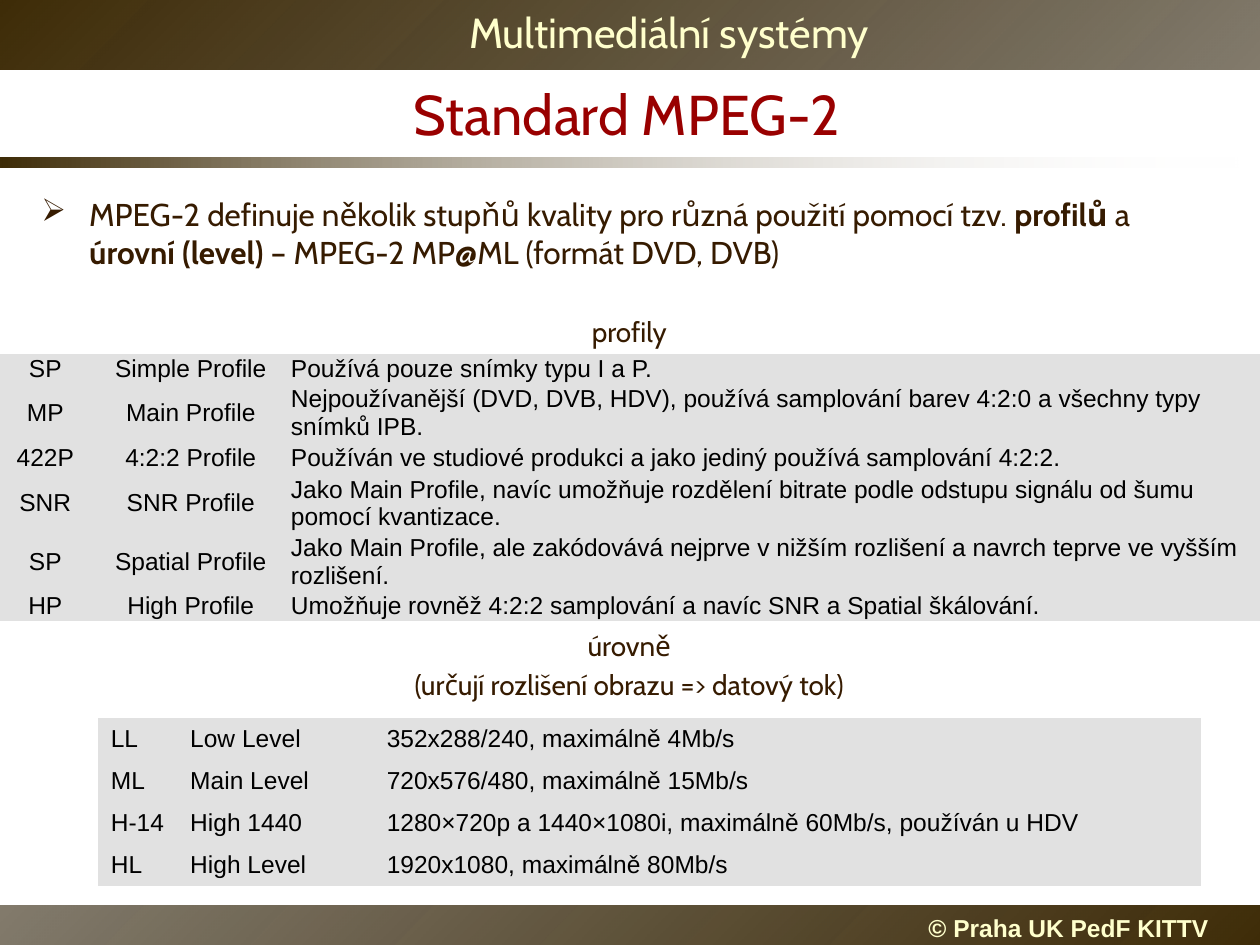
from lxml import etree
from pptx import Presentation
from pptx.dml.color import RGBColor
from pptx.enum import shapes, text
from pptx.oxml import parse_xml
from pptx.oxml.ns import nsdecls, qn
from pptx.util import Inches, Pt

DARK_BROWN = RGBColor(0x2C, 0x1F, 0x06)
BROWN = RGBColor(0x3E, 0x2C, 0x08)
TEXT_BROWN = RGBColor(0x36, 0x1B, 0x00)
WHITE = RGBColor(0xFF, 0xFF, 0xFF)
CREAM = RGBColor(0xFF, 0xFF, 0xCC)
RED = RGBColor(0x99, 0x00, 0x00)
BLACK = RGBColor(0, 0, 0)
CELL_GREY = RGBColor(0xE1, 0xE1, 0xE1)

LEFT, CENTER = text.PP_ALIGN.LEFT, text.PP_ALIGN.CENTER

PROFILES = [
    ("SP", "Simple Profile", "Používá pouze snímky typu I a P."),
    ("MP", "Main Profile", "Nejpoužívanější (DVD, DVB, HDV), používá samplování "
     "barev 4:2:0 a všechny typy snímků IPB."),
    ("422P", "4:2:2 Profile", "Používán ve studiové produkci a jako jediný "
     "používá samplování 4:2:2."),
    ("SNR", "SNR Profile", "Jako Main Profile, navíc umožňuje rozdělení bitrate "
     "podle odstupu signálu od šumu pomocí kvantizace."),
    ("SP", "Spatial Profile", "Jako Main Profile, ale zakódovává nejprve v nižším "
     "rozlišení a navrch teprve ve vyšším rozlišení."),
    ("HP", "High Profile", "Umožňuje rovněž 4:2:2 samplování a navíc SNR a "
     "Spatial škálování."),
]
LEVELS = [
    ("LL", "Low Level", "352x288/240, maximálně 4Mb/s"),
    ("ML", "Main Level", "720x576/480, maximálně 15Mb/s"),
    ("H-14", "High 1440", "1280×720p a 1440×1080i, maximálně 60Mb/s, používán u HDV"),
    ("HL", "High Level", "1920x1080, maximálně 80Mb/s"),
]
DEFINITION = [
    ("MPEG-2 definuje několik stupňů kvality pro různá použití pomocí tzv. ", False),
    ("profilů", True),
    (" a ", False),
    ("úrovní (level)", True),
    (" – MPEG-2 MP@ML (formát DVD, DVB)", False),
]


def set_font(paragraph, name, size, color, bold=False):
    font = paragraph.font
    font.name, font.size, font.bold = name, Pt(size), bold
    font.color.rgb = color


def add_gradient_band(slide, box, stops, angle, rotation=0):
    """Add a borderless rectangle; stops are (colour, opacity percent) pairs."""
    band = slide.shapes.add_shape(shapes.MSO_SHAPE.RECTANGLE, *map(Inches, box))
    band.shadow.inherit = False
    band.rotation = rotation
    band.line.fill.background()
    stop_xml = "".join(
        f'<a:gs pos="{position}"><a:srgbClr val="{color}">'
        f'<a:alpha val="{opacity * 1000}"/></a:srgbClr></a:gs>'
        for position, (color, opacity) in zip((0, 100000), stops))
    gradient = parse_xml(
        f'<a:gradFill {nsdecls("a")} rotWithShape="1"><a:gsLst>{stop_xml}</a:gsLst>'
        f'<a:lin ang="{angle * 60000}" scaled="1"/></a:gradFill>')
    band._element.spPr.find(qn("a:prstGeom")).addnext(gradient)


def add_lines(slide, box, lines, name, size, color, bold=False, align=LEFT,
              anchor=text.MSO_ANCHOR.TOP):
    """Add a text box with one paragraph for each line and return its frame."""
    frame = slide.shapes.add_textbox(*map(Inches, box)).text_frame
    frame.word_wrap = True
    frame.vertical_anchor = anchor
    frame.text = "\n".join(lines)
    for index, paragraph in enumerate(frame.paragraphs):
        paragraph.alignment = align
        if index:
            paragraph.space_before = Pt(size * 0.2)
        set_font(paragraph, name, size, color, bold)
    return frame


def add_header(slide, box):
    left, top, width, height = box
    add_gradient_band(slide, box, [(DARK_BROWN, 59), (BROWN, 100)], 45, rotation=180)
    frame = add_lines(slide, (left + 0.78, top, width - 0.94, height - 0.05),
                      ["Multimediální systémy"], "Cabin", 24, CREAM, align=CENTER)
    run_properties = frame.paragraphs[0].runs[0]._r.get_or_add_rPr()
    run_properties.append(parse_xml(
        f'<a:effectLst {nsdecls("a")}><a:outerShdw dist="38100" dir="2700000">'
        '<a:srgbClr val="000000"/></a:outerShdw></a:effectLst>'))


def add_footer(slide, box):
    left, top, width, height = box
    add_gradient_band(slide, box, [(DARK_BROWN, 59), (BROWN, 100)], 45)
    add_lines(slide, (left + 7.27, top, 2.58, height), ["© Praha UK PedF KITTV"],
              "Arial", 14, CREAM, bold=True, anchor=text.MSO_ANCHOR.MIDDLE)


def place_title(slide, box):
    left, top, width, height = box
    title = slide.shapes.title
    title.left, title.top, title.width, title.height = map(Inches, box)
    title.text_frame.text = "Standard MPEG-2"
    title.text_frame.vertical_anchor = text.MSO_ANCHOR.MIDDLE
    paragraph = title.text_frame.paragraphs[0]
    paragraph.alignment = CENTER
    set_font(paragraph, "Cabin", 32, RED)
    add_gradient_band(slide, (0, top + height, 9.88, 0.08),
                      [(BROWN, 100), (WHITE, 0)], 0)


def add_definition(slide, box):
    frame = slide.shapes.add_textbox(*map(Inches, box)).text_frame
    frame.word_wrap = True
    paragraph = frame.paragraphs[0]
    properties = paragraph._p.get_or_add_pPr()
    properties.set("marL", str(Inches(0.38)))
    properties.set("indent", str(-Inches(0.38)))
    etree.SubElement(properties, qn("a:buChar")).set("char", "➢")
    set_font(paragraph, "Cabin", 18, TEXT_BROWN)
    for words, bold in DEFINITION:
        run = paragraph.add_run()
        run.text = words
        run.font.bold = bold


def add_grid(slide, left, top, rows, widths, heights, alignments, margins):
    """Add a plain grey table; margins are (horizontal, vertical) cell insets."""
    frame = slide.shapes.add_table(
        len(rows), len(widths), Inches(left), Inches(top),
        Inches(sum(widths)), Inches(sum(heights)))
    table = frame.table
    table.first_row = table.horz_banding = False
    for column, width in zip(table.columns, widths):
        column.width = Inches(width)
    for row, height, values in zip(table.rows, heights, rows):
        row.height = Inches(height)
        for cell, value, alignment in zip(row.cells, values, alignments):
            cell.text = value
            cell.fill.solid()
            cell.fill.fore_color.rgb = CELL_GREY
            cell.vertical_anchor = text.MSO_ANCHOR.MIDDLE
            cell.margin_left = cell.margin_right = Inches(margins[0])
            cell.margin_top = cell.margin_bottom = Inches(margins[1])
            for side in ("L", "R", "T", "B"):
                line = etree.Element(qn(f"a:ln{side}"), w="0")
                etree.SubElement(line, qn("a:noFill"))
                cell._tc.tcPr.insert("LRTB".index(side), line)
            paragraph = cell.text_frame.paragraphs[0]
            paragraph.alignment = alignment
            set_font(paragraph, "Arial", 14, BLACK)


def main():
    presentation = Presentation()
    presentation.slide_width, presentation.slide_height = Inches(10), Inches(7.5)
    slide = presentation.slides.add_slide(presentation.slide_layouts[5])

    add_footer(slide, (0, 7.19, 10, 0.34))
    add_header(slide, (0, 0, 10, 0.55))
    place_title(slide, (0.16, 0.55, 9.63, 0.7))
    add_definition(slide, (0.23, 1.5, 9.53, 0.71))
    add_lines(slide, (0.23, 2.45, 9.53, 0.37), ["profily"],
              "Cabin", 16, TEXT_BROWN, align=CENTER)
    add_grid(slide, 0, 2.81, PROFILES, (0.72, 1.59, 7.69),
             (0.22, 0.43, 0.25, 0.43, 0.43, 0.22), (CENTER, CENTER, LEFT), (0, 0))
    add_lines(slide, (0.23, 4.94, 9.53, 0.68),
              ["úrovně", "(určují rozlišení obrazu => datový tok)"],
              "Cabin", 16, TEXT_BROWN, align=CENTER)
    add_grid(slide, 0.78, 5.7, LEVELS, (0.63, 1.56, 6.56), [0.32] * len(LEVELS),
             [LEFT] * 3, (0.1, 0.05))
    presentation.save("out.pptx")


if __name__ == "__main__":
    main()
